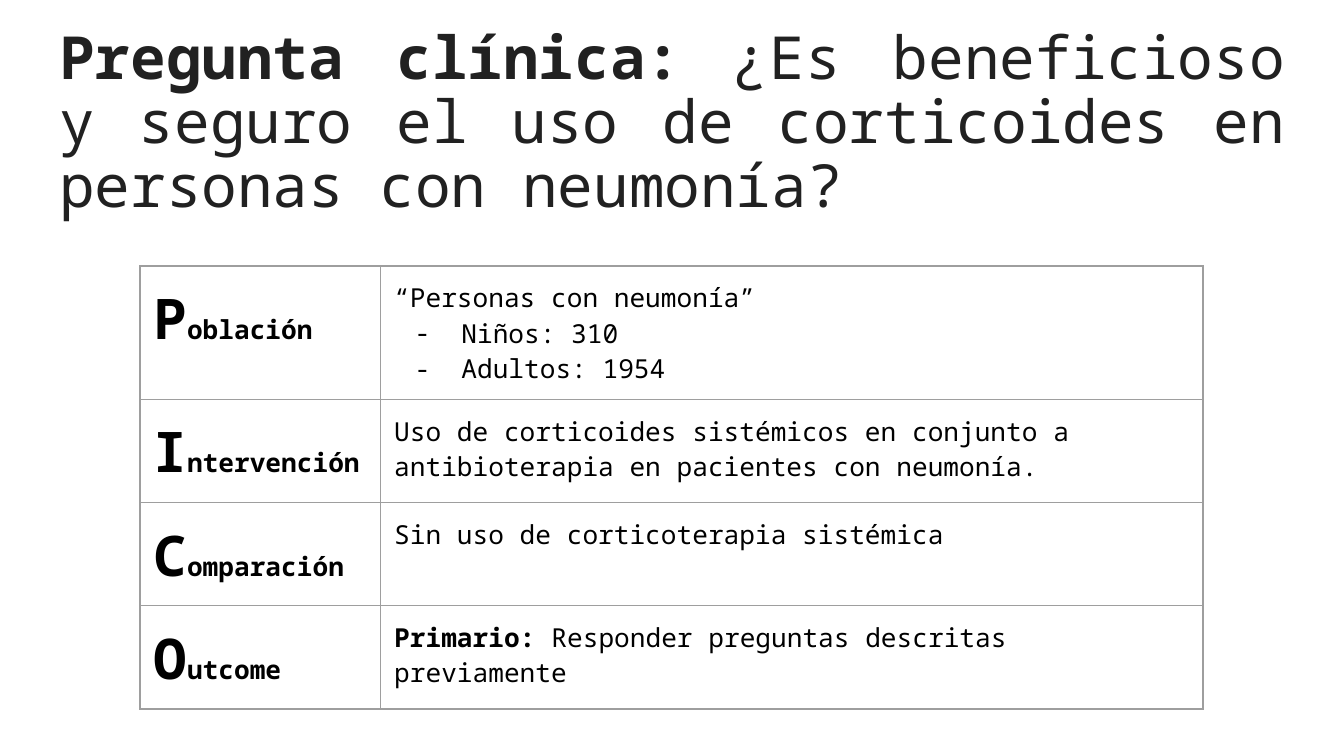
from lxml.etree import SubElement as Sub
from pptx import Presentation
from pptx.dml.color import RGBColor
from pptx.enum.text import MSO_ANCHOR as Anchor, MSO_AUTO_SIZE as Fit, PP_ALIGN as Align
from pptx.oxml.ns import qn
from pptx.util import Pt

WHITE = RGBColor(0xFF, 0xFF, 0xFF)
BLACK = RGBColor(0x00, 0x00, 0x00)
DARK = RGBColor(0x21, 0x21, 0x21)
GREY = RGBColor(0x9E, 0x9E, 0x9E)

ROWS = [
    ("Población", [("", "“Personas con neumonía”"),
                   ("-", "Niños: 310"),
                   ("-", "Adultos: 1954")]),
    ("Intervención", [("", "Uso de corticoides sistémicos en conjunto a "
                           "antibioterapia en pacientes con neumonía.")]),
    ("Comparación", [("", "Sin uso de corticoterapia sistémica")]),
    ("Outcome", [("Primario: ", "Responder preguntas descritas previamente")]),
]
WIDTHS = [129, 440.5]
HEIGHTS = [71.5, 55, 55, 55]


class Deck:
    font = "Noto Sans Mono"
    inset = Pt(7.2)
    size = 14
    big = 30

    def __init__(self, wide, high):
        self.prs = Presentation()
        self.prs.slide_width, self.prs.slide_height = Pt(wide), Pt(high)
        self.slide = self.prs.slides.add_slide(self.prs.slide_layouts[5])
        fill = self.slide.background.fill
        fill.solid()
        fill.fore_color.rgb = WHITE

    def run(self, para, text, size, bold=False, color=BLACK):
        run = para.add_run()
        run.text = text
        font = run.font
        font.name, font.size, font.bold = self.font, Pt(size), bold
        font.color.rgb = color

    def pad(self, box):
        box.margin_left = box.margin_right = self.inset
        box.margin_top = box.margin_bottom = self.inset

    def title(self, lead, rest, left, top, wide, high):
        shape = self.slide.shapes.title
        shape.left, shape.top = Pt(left), Pt(top)
        shape.width, shape.height = Pt(wide), Pt(high)
        frame = shape.text_frame
        frame.word_wrap, frame.auto_size = True, Fit.NONE
        frame.vertical_anchor = Anchor.TOP
        self.pad(frame)
        para = frame.paragraphs[0]
        para.alignment, para.line_spacing = Align.JUSTIFY, 0.9
        self.run(para, lead, 31.8, True, DARK)
        self.run(para, rest, 31.8, False, DARK)

    def frame(self, cell):
        props = cell._tc.get_or_add_tcPr()
        for side in ("a:lnL", "a:lnR", "a:lnT", "a:lnB"):
            line = Sub(props, qn(side), w=str(Pt(0.75)))
            paint = Sub(line, qn("a:solidFill"))
            Sub(paint, qn("a:srgbClr"), val=str(GREY))
        cell.fill.background()
        self.pad(cell)

    def dash(self, para):
        props = para._p.get_or_add_pPr()
        props.set("marL", str(Pt(36)))
        props.set("indent", str(Pt(-25)))
        color = Sub(props, qn("a:buClr"))
        Sub(color, qn("a:srgbClr"), val=str(BLACK))
        Sub(props, qn("a:buSzPts"), val=str(self.size * 100))
        Sub(props, qn("a:buFont"), typeface=self.font)
        Sub(props, qn("a:buChar"), char="-")

    def label(self, cell, word):
        para = cell.text_frame.paragraphs[0]
        self.run(para, word[0], self.big, True)
        self.run(para, word[1:], self.size, True)

    def notes(self, cell, lines):
        frame = cell.text_frame
        for i, (lead, text) in enumerate(lines):
            para = frame.add_paragraph() if i else frame.paragraphs[0]
            if lead == "-":
                self.dash(para)
            elif lead:
                self.run(para, lead, self.size, True)
            self.run(para, text, self.size)

    def table(self, rows, left, top, widths, heights):
        grid = self.slide.shapes.add_table(
            len(rows), len(widths), Pt(left), Pt(top),
            Pt(sum(widths)), Pt(sum(heights))).table
        grid.first_row = grid.horz_banding = False
        for col, wide in zip(grid.columns, widths):
            col.width = Pt(wide)
        for row, high, (word, lines) in zip(grid.rows, heights, rows):
            row.height = Pt(high)
            for cell in row.cells:
                self.frame(cell)
            self.label(row.cells[0], word)
            self.notes(row.cells[1], lines)


def main():
    deck = Deck(720, 405)
    deck.title("Pregunta clínica: ",
               "¿Es beneficioso y seguro el uso de corticoides "
               "en personas con neumonía?", 24.5, 8, 671, 127.5)
    deck.table(ROWS, 75, 142.5, WIDTHS, HEIGHTS)
    deck.prs.save("out.pptx")


if __name__ == "__main__":
    main()
